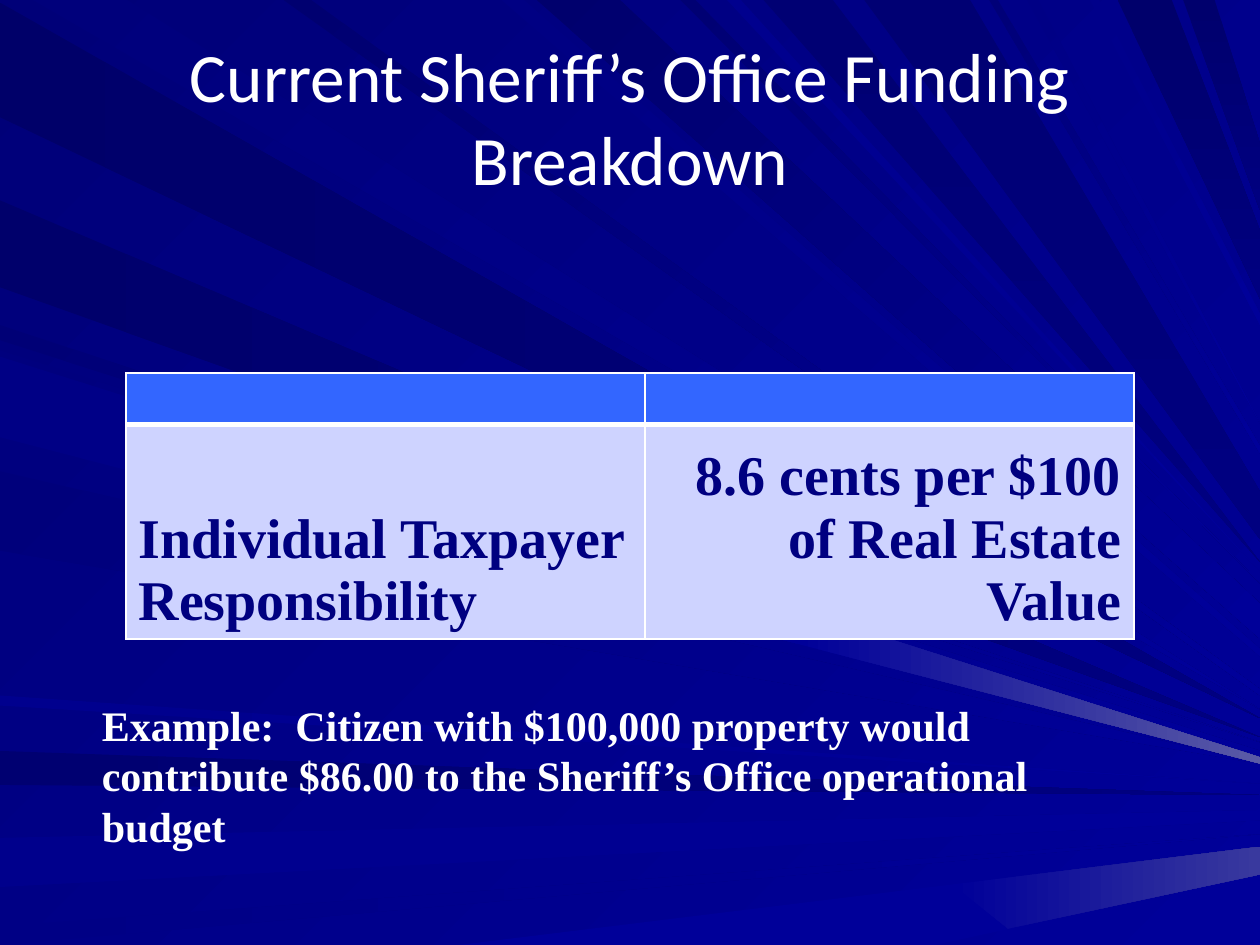
"""Build the Sheriff's Office funding slide with its ray-burst backdrop."""
import pptx
import pptx.dml.color
import pptx.enum.text
import pptx.oxml
import pptx.oxml.ns
import pptx.util

ALIGN = pptx.enum.text.PP_ALIGN
ANCHOR = pptx.enum.text.MSO_ANCHOR
WHITE, NAVY, ROYAL, LAVENDER = "FFFFFF", "000080", "3366FF", "CED3FF"
DEEP = "000099"
WIDTH, HEIGHT = 10, 7.5
BACKDROP = ("000078", DEEP, 45)

TITLE = "Current Sheriff’s Office Funding Breakdown"
EXAMPLE = ("Example:  Citizen with $100,000 property would contribute $86.00 "
           "to the Sheriff’s Office operational budget")
FUNDING = [
    ["", ""],
    ["Individual Taxpayer Responsibility", "8.6 cents per $100 of Real Estate Value"],
]
FUNDING_BOX = (1, 2.96, 8, 1.99)
COLUMN_WIDTHS = [4.12, 3.88]
ROW_HEIGHTS = [0.41, 1.58]
ROW_FILLS = [ROYAL, LAVENDER]
COLUMN_ALIGNS = [ALIGN.LEFT, ALIGN.RIGHT]

TITLE_FORMAT = {"name": "Calibri", "size": pptx.util.Pt(39.6), "bold": False}
FUNDING_FORMAT = {"name": "Times New Roman", "size": pptx.util.Pt(32), "bold": True}
EXAMPLE_FORMAT = {"name": "Times New Roman", "size": pptx.util.Pt(24), "bold": True}

RAYS = {
    ("left", NAVY, 0): [
        ("000069", 0.02, 0.93, 5.7),
        ("000071", 5.96, 6.23, 6.31),
        ("00006B", 1.59, 2.28, 5.85),
    ],
    ("left", DEEP, 0): [
        ("00008C", 6.65, 7.04, 6.43, 6.51),
        ("000085", 7.35, 7.5, 6.62),
        ("00008E", 5.52, 5.6, 6.22),
    ],
    ("bottom", DEEP, 0): [(DEEP, 3.64, 7.42, 6.72, 6.94)],
    ("left", DEEP, 45): [
        ("000076", 2.58, 2.7, 5.89),
        ("00007E", 2.78, 3.42, 5.96, 6.02),
        ("00007B", 3.74, 4.37, 6.06),
    ],
    ("top", DEEP, 45): [
        ("00007B", 0.26, 1.01, 5.63),
        ("000083", 3.98, 4.16, 5.15, 5.21),
        ("00006D", 4.26, 4.92, 4.79, 5.07),
        ("000073", 5.4, 5.52, 4.63),
        ("000070", 2.25, 2.47, 5.47, 5.52),
        ("00008E", 5.77, 5.88, 4.54),
        ("000078", 7.85, 7.92, 3.54, 3.6),
        ("000085", 8.15, 8.24, 3.36),
        ("00008A", 8.65, 8.72, 2.49, 2.58),
    ],
    ("top", NAVY, 90): [
        ("000073", 6.06, 6.61, 4.46),
        ("00006B", 8.87, 9.3, 1.83, 2.37),
        ("00006D", 9.39, 9.64, 1.14, 1.67),
        ("000073", 6.86, 7.7, 3.9, 4.28),
    ],
}
LEFT_BAND = ("000085", DEEP, 0, [(0, 2.83), (0, 3.47), (6.33, 5.11), (6.37, 4.85)])
GLINTS = [
    (DEEP, "5A5AA6", 0, [(6.37, 4.85), (6.33, 5.11), (10, 6.06), (10, 6.01)]),
    (DEEP, "39399E", 0, [(7.56, 7.02), (8, 7.37), (10, 6.94), (10, 6.72)]),
]


def rgb(color):
    return pptx.dml.color.RGBColor.from_string(color)


def inches(values):
    return [pptx.util.Inches(value) for value in values]


def paint(fill, start, end, angle):
    if start == end:
        fill.solid()
        fill.fore_color.rgb = rgb(start)
        return
    fill.gradient()
    fill.gradient_angle = -angle % 360
    for stop, position, color in zip(fill.gradient_stops, (0, 1), (start, end)):
        stop.position = position
        stop.color.rgb = rgb(color)


def add_ray(slide, start, end, angle, corners):
    first, *others = [inches(corner) for corner in corners]
    builder = slide.shapes.build_freeform(*first)
    builder.add_line_segments(others, close=True)
    ray = builder.convert_to_shape()
    ray.shadow.inherit = False
    ray.line.fill.background()
    paint(ray.fill, start, end, angle)


def ray_corners(edge, near, far, *tips):
    ends = [(WIDTH, tip) for tip in tips]
    if edge == "left":
        return [(0, near), (0, far), *reversed(ends)]
    if edge == "top":
        return [(near, 0), (far, 0), *ends]
    return [(near, HEIGHT), (far, HEIGHT), *reversed(ends)]


def add_burst(slide):
    for (edge, end, angle), rays in RAYS.items():
        for start, *places in rays:
            add_ray(slide, start, end, angle, ray_corners(edge, *places))
    for ray in [LEFT_BAND, *GLINTS]:
        add_ray(slide, *ray)


def write(frame, words, text_format, color, align):
    paragraph = frame.paragraphs[0]
    paragraph.alignment = align
    run = paragraph.add_run()
    run.text = words
    for attribute, value in text_format.items():
        setattr(run.font, attribute, value)
    run.font.color.rgb = rgb(color)


def add_words(slide, box, words, text_format, align, anchor):
    frame = slide.shapes.add_textbox(*inches(box)).text_frame
    frame.word_wrap = True
    frame.vertical_anchor = anchor
    write(frame, words, text_format, WHITE, align)


def add_borders(cell, bottom_width):
    properties = cell._tc.get_or_add_tcPr()
    widths = {"lnL": 1, "lnR": 1, "lnT": 1, "lnB": bottom_width}
    for index, (side, width) in enumerate(widths.items()):
        properties.insert(index, pptx.oxml.parse_xml(
            f'<a:{side} {pptx.oxml.ns.nsdecls("a")} w="{pptx.util.Pt(width)}">'
            f'<a:solidFill><a:srgbClr val="{WHITE}"/></a:solidFill></a:{side}>'))


def add_funding(slide):
    funding = slide.shapes.add_table(
        len(ROW_HEIGHTS), len(COLUMN_WIDTHS), *inches(FUNDING_BOX)).table
    for column, width in zip(funding.columns, inches(COLUMN_WIDTHS)):
        column.width = width
    for row, height, fill, entries in zip(
            funding.rows, inches(ROW_HEIGHTS), ROW_FILLS, FUNDING):
        row.height = height
        for cell, entry, align in zip(row.cells, entries, COLUMN_ALIGNS):
            paint(cell.fill, fill, fill, 0)
            add_borders(cell, 1 if entry else 3)
            cell.vertical_anchor = ANCHOR.BOTTOM
            if entry:
                write(cell.text_frame, entry, FUNDING_FORMAT, NAVY, align)


def main():
    deck = pptx.Presentation()
    deck.slide_width, deck.slide_height = inches((WIDTH, HEIGHT))
    slide = deck.slides.add_slide(deck.slide_layouts[6])
    paint(slide.background.fill, *BACKDROP)
    add_burst(slide)
    add_words(slide, (0.5, 0.3, 9, 1.25), TITLE, TITLE_FORMAT, ALIGN.CENTER, ANCHOR.MIDDLE)
    add_funding(slide)
    add_words(slide, (0.71, 5.5, 8.58, 0.91), EXAMPLE, EXAMPLE_FORMAT, ALIGN.LEFT, ANCHOR.TOP)
    deck.save("out.pptx")


if __name__ == "__main__":
    main()
